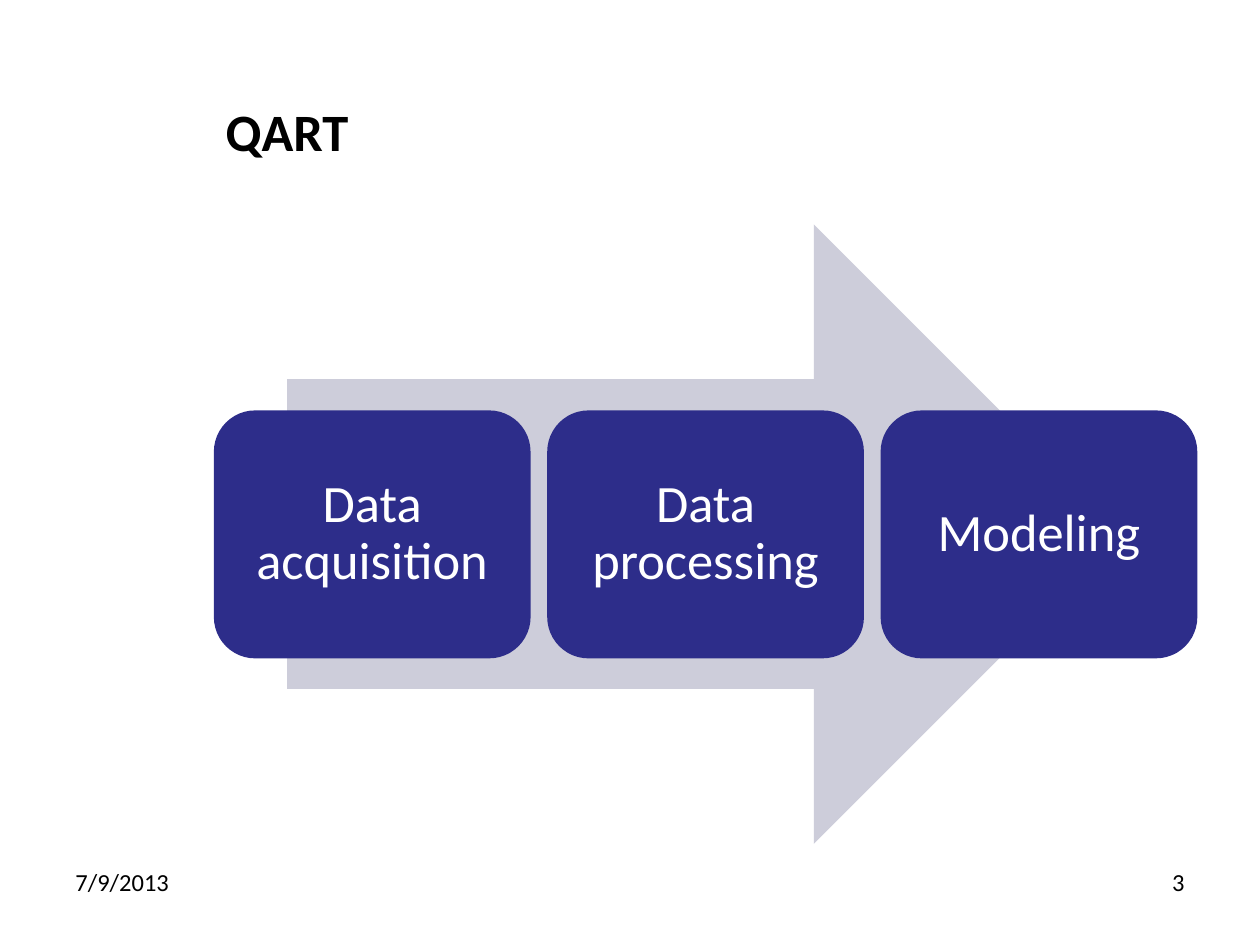
from pptx import Presentation
from pptx.dml.color import RGBColor
from pptx.enum.shapes import MSO_SHAPE as Shape
from pptx.enum.text import MSO_ANCHOR as Anchor, PP_ALIGN as Align
from pptx.util import Pt

BLACK = RGBColor(0x00, 0x00, 0x00)
WHITE = RGBColor(0xFF, 0xFF, 0xFF)
NAVY = RGBColor(0x2D, 0x2D, 0x8A)
PALE_LILAC = RGBColor(0xCD, 0xCD, 0xDA)

FONT = "Calibri"
STEPS = ["Data acquisition", "Data processing", "Modeling"]
STEP_LEFT, STEP_TOP, STEP_WIDTH, STEP_HEIGHT = 122.2, 234.5, 181, 141.7
STEP_PITCH = 190.5


def write_text(shape, text, size, color=BLACK, bold=False, align=Align.LEFT,
               anchor=Anchor.TOP, line_spacing=None):
    frame = shape.text_frame
    frame.word_wrap = True
    frame.vertical_anchor = anchor
    paragraph = frame.paragraphs[0]
    paragraph.text = text
    paragraph.alignment = align
    paragraph.line_spacing = line_spacing
    font = paragraph.font
    font.name, font.size, font.bold = FONT, Pt(size), bold
    font.color.rgb = color


def add_title(slide, text):
    title = slide.shapes.title
    title.left, title.top = Pt(121.7), Pt(37.5)
    title.width, title.height = Pt(562.3), Pt(74)
    write_text(title, text, 30, bold=True, anchor=Anchor.MIDDLE)


def add_filled_shape(slide, kind, left, top, width, height, color):
    shape = slide.shapes.add_shape(kind, Pt(left), Pt(top), Pt(width), Pt(height))
    shape.shadow.inherit = False
    shape.fill.solid()
    shape.fill.fore_color.rgb = color
    shape.line.fill.background()
    return shape


def add_step(slide, index, text):
    left = STEP_LEFT + index * STEP_PITCH
    box = add_filled_shape(slide, Shape.ROUNDED_RECTANGLE, left, STEP_TOP,
                           STEP_WIDTH, STEP_HEIGHT, NAVY)
    frame = box.text_frame
    frame.margin_left = frame.margin_right = Pt(2)
    frame.margin_top = frame.margin_bottom = Pt(2)
    write_text(box, text, 30, WHITE, align=Align.CENTER, anchor=Anchor.MIDDLE,
               line_spacing=0.9)


def add_footer(slide, left, text, align):
    box = slide.shapes.add_textbox(Pt(left), Pt(492), Pt(168), Pt(37.5))
    write_text(box, text, 14, align=align)


def main():
    presentation = Presentation()
    presentation.slide_width, presentation.slide_height = Pt(720), Pt(540)
    slide = presentation.slides.add_slide(presentation.slide_layouts[5])

    add_title(slide, "QART")
    add_filled_shape(slide, Shape.RIGHT_ARROW, 164, 128.2, 478, 354, PALE_LILAC)
    for index, step in enumerate(STEPS):
        add_step(slide, index, step)
    add_footer(slide, 36, "7/9/2013", Align.LEFT)
    add_footer(slide, 516, "3", Align.RIGHT)

    presentation.save("out.pptx")


if __name__ == "__main__":
    main()
